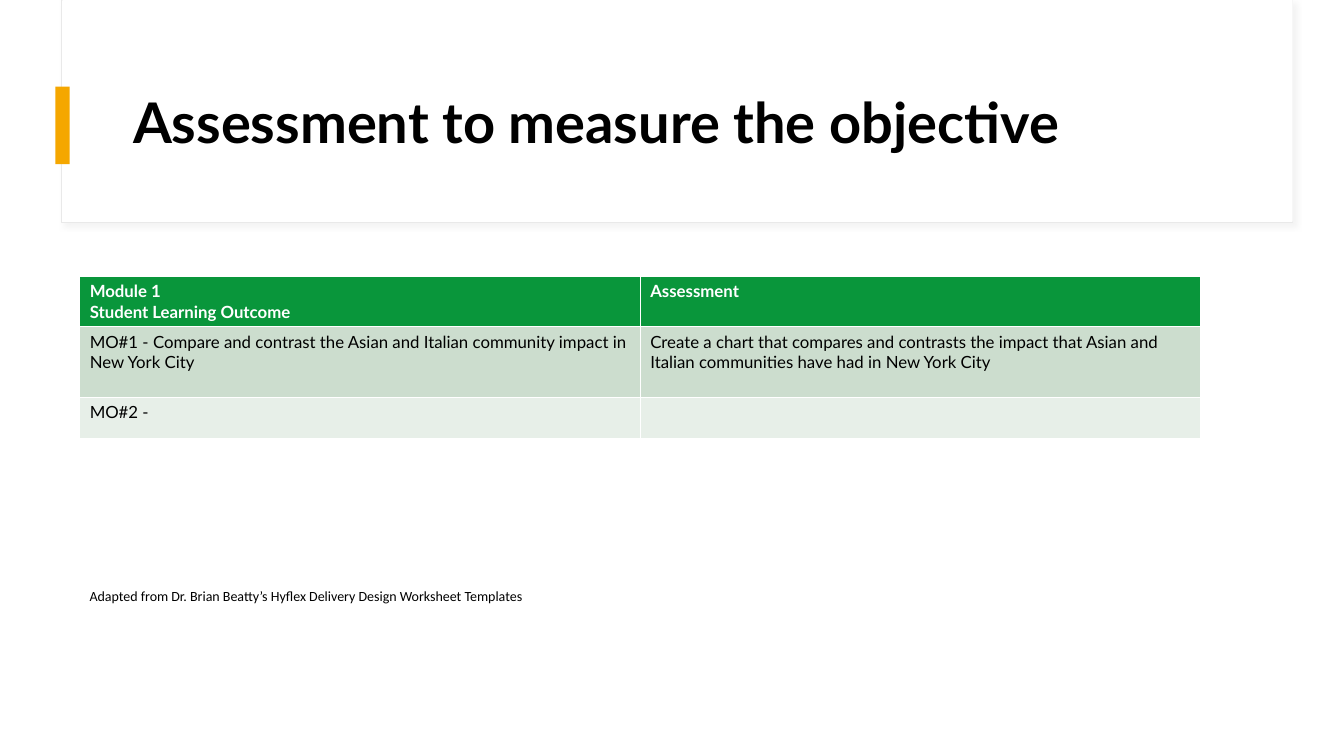
from pptx import Presentation
from pptx.dml.color import RGBColor
from pptx.enum.shapes import MSO_SHAPE
from pptx.enum.text import MSO_ANCHOR, MSO_AUTO_SIZE, PP_ALIGN
from pptx.oxml import parse_xml
from pptx.oxml.ns import nsdecls
from pptx.util import Inches, Pt


def paint(target, color):
    """Give a fill or a font a solid colour from a hex string."""
    if hasattr(target, "solid"):
        target.solid()
        target.fore_color.rgb = RGBColor.from_string(color)
    else:
        target.color.rgb = RGBColor.from_string(color)


def style(frame, size, color, bold=False, font="Lato"):
    for para in frame.paragraphs:
        for run in para.runs:
            run.font.name = font
            run.font.size = Pt(size)
            run.font.bold = bold
            paint(run.font, color)


deck = Presentation()
deck.slide_width = Inches(13.33)
deck.slide_height = Inches(7.5)
slide = deck.slides.add_slide(deck.slide_layouts[5])
shapes = slide.shapes

# Header panel with a soft shadow
panel = shapes.add_shape(MSO_SHAPE.RECTANGLE, Inches(0.61), Inches(0), Inches(12.21), Inches(2.21))
paint(panel.fill, "FFFFFF")
paint(panel.line.fill, "E9E9E9")
panel.line.width = Pt(0.75)
panel._element.spPr.append(parse_xml(
    f'<a:effectLst {nsdecls("a")}>'
    f'<a:outerShdw blurRad="{Pt(4)}" dist="{Pt(3)}" dir="2700000" algn="tl" rotWithShape="0">'
    '<a:srgbClr val="D9D9D9"><a:alpha val="30000"/></a:srgbClr>'
    '</a:outerShdw></a:effectLst>'))

# Panel face and accent bar
for left, top, width, height, color in [
    (0.62, 0, 12.2, 2.2, "FFFFFF"),
    (0.55, 0.86, 0.14, 0.77, "F5A700"),
]:
    block = shapes.add_shape(MSO_SHAPE.RECTANGLE, Inches(left), Inches(top), Inches(width), Inches(height))
    paint(block.fill, color)
    block.line.fill.background()
    block.shadow.inherit = False

# Title, brought in front of the panel
title = shapes.title
title.left, title.top = Inches(1.22), Inches(0.6)
title.width, title.height = Inches(11.12), Inches(1.29)
frame = title.text_frame
frame.text = "Assessment to measure the objective"
frame.word_wrap = True
frame.auto_size = MSO_AUTO_SIZE.NONE
frame.vertical_anchor = MSO_ANCHOR.MIDDLE
frame.paragraphs[0].alignment = PP_ALIGN.LEFT
frame.paragraphs[0].line_spacing = 0.9
style(frame, 40, "000000", bold=True)
shapes._spTree.append(title._element)

# Outcome table: height, fill, text colour and cells of each row
rows = [
    (0.49, "09963B", "FFFFFF", ["Module 1\nStudent Learning Outcome", "Assessment"]),
    (0.7, "CCDDCE", "000000", [
        "MO#1 - Compare and contrast the Asian and Italian community impact in New York City",
        "Create a chart that compares and contrasts the impact that Asian and "
        "Italian communities have had in New York City"]),
    (0.41, "E7EFE8", "000000", ["MO#2 -", ""]),
]
table = shapes.add_table(len(rows), 2, Inches(0.79), Inches(2.74), Inches(11.12), Inches(1.6)).table
for r, (height, fill, color, texts) in enumerate(rows):
    table.rows[r].height = Inches(height)
    for c, text in enumerate(texts):
        cell = table.cell(r, c)
        cell.text_frame.text = text
        paint(cell.fill, fill)
        style(cell.text_frame, 12, color, bold=r == 0)

# Credit line
note = shapes.add_textbox(Inches(0.79), Inches(5.78), Inches(9.26), Inches(0.57))
note.text_frame.word_wrap = True
note.text_frame.text = "Adapted from Dr. Brian Beatty’s Hyflex Delivery Design Worksheet Templates"
style(note.text_frame, 10, "000000", font="Calibri")

deck.save("out.pptx")
